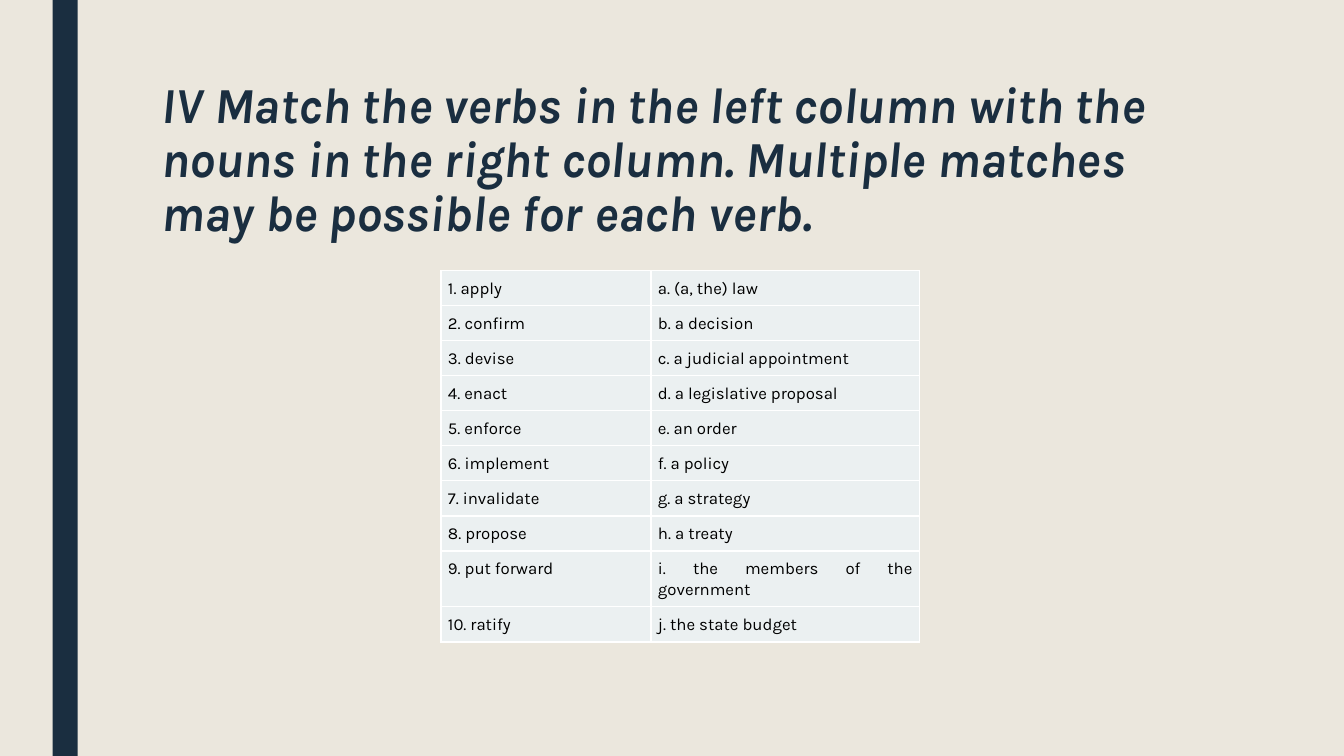
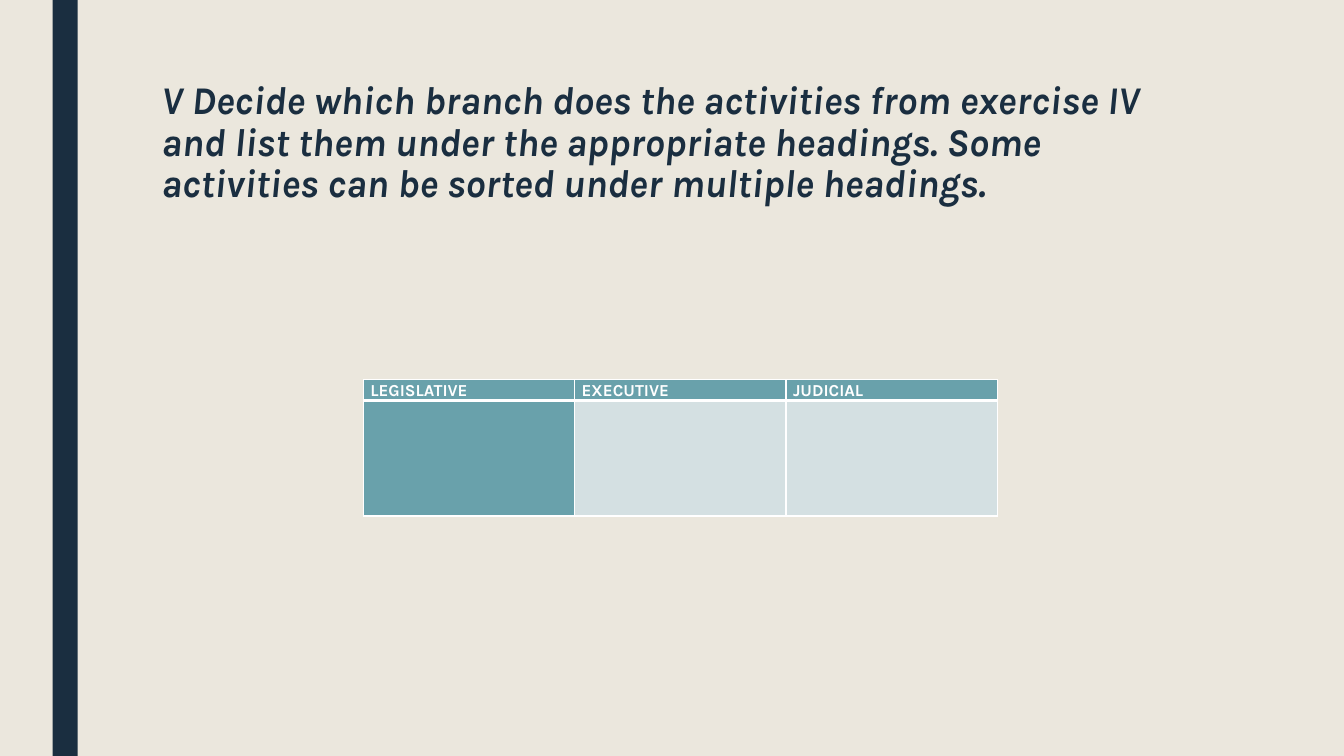
import dataclasses

import pptx
import pptx.dml.color
import pptx.enum.shapes
import pptx.enum.text
import pptx.oxml
import pptx.oxml.ns
import pptx.util

Pt = pptx.util.Pt
Align = pptx.enum.text.PP_ALIGN


@dataclasses.dataclass(frozen=True)
class Theme:
    font: str = "Karla"
    paper: str = "EBE7DD"
    navy: str = "1A2E40"
    teal: str = "69A1AB"
    pale: str = "EBF0F1"
    mist: str = "D4E0E2"
    white: str = "FFFFFF"
    black: str = "000000"
    title_size: int = 36
    long_title_size: int = 28
    cell_size: int = 12
    thin_rule: int = 1
    thick_rule: int = 3


class SlideBuilder:
    """Draw exercise slides in one shared style."""

    def __init__(self, theme):
        self.theme = theme
        self.deck = pptx.Presentation()
        self.deck.slide_width, self.deck.slide_height = Pt(960), Pt(540)
        self.paint(self.deck.slide_master.background.fill, theme.paper)
        self.page = None

    def paint(self, fill, color):
        fill.solid()
        fill.fore_color.rgb = pptx.dml.color.RGBColor.from_string(color)

    def start_page(self, title, size):
        self.page = self.deck.slides.add_slide(self.deck.slide_layouts.get_by_name("Title Only"))
        self.band()
        self.title(title, size)

    def band(self):
        band = self.page.shapes.add_shape(
            pptx.enum.shapes.MSO_SHAPE.RECTANGLE, Pt(37.5), Pt(0), Pt(18), Pt(540))
        band.shadow.inherit = False
        band.line.fill.background()
        self.paint(band.fill, self.theme.navy)

    def title(self, text, size):
        box = self.page.shapes.title
        box.left, box.top, box.width, box.height = Pt(108), Pt(54), Pt(756), Pt(117)
        frame = box.text_frame
        frame.word_wrap = True
        frame.auto_size = pptx.enum.text.MSO_AUTO_SIZE.NONE
        frame.vertical_anchor = pptx.enum.text.MSO_ANCHOR.TOP
        span = self.add_text(frame, text, size, self.theme.navy, Align.LEFT, 0.89)
        span.font.bold = span.font.italic = True

    def add_text(self, frame, text, size, color, align, spacing):
        para = frame.paragraphs[0]
        para.alignment, para.line_spacing = align, spacing
        span = para.add_run()
        span.text = text
        span.font.name, span.font.size = self.theme.font, Pt(size)
        span.font.color.rgb = pptx.dml.color.RGBColor.from_string(color)
        return span

    def table(self, left, top, widths, heights):
        frame = self.page.shapes.add_table(
            len(heights), len(widths), Pt(left), Pt(top), Pt(sum(widths)), Pt(sum(heights)))
        table = frame.table
        table.first_row = table.horz_banding = False
        for column, width in zip(table.columns, widths):
            column.width = Pt(width)
        for row, height in zip(table.rows, heights):
            row.height = Pt(height)
        return table

    def cell(self, cell, text, fill, color, inset, bold=False, **rules):
        cell.margin_left = cell.margin_right = Pt(5)
        cell.margin_top = cell.margin_bottom = Pt(inset)
        self.paint(cell.fill, fill)
        self.borders(cell, **rules)
        if text:
            span = self.add_text(
                cell.text_frame, text, self.theme.cell_size, color, Align.JUSTIFY, 1.07)
            span.font.bold = bold

    def borders(self, cell, **rules):
        properties = cell._tc.get_or_add_tcPr()
        for index, side in enumerate("LRTB"):
            width = Pt(rules.get(side, self.theme.thin_rule))
            properties.insert(index, pptx.oxml.parse_xml(
                f'<a:ln{side} {pptx.oxml.ns.nsdecls("a")} w="{width}"><a:solidFill>'
                f'<a:srgbClr val="{self.theme.white}"/></a:solidFill></a:ln{side}>'))

    def matching_table(self, pairs):
        heights = [40 if "members" in noun else 25 for _, noun in pairs]
        table = self.table(315, 193.5, [150, 192], heights)
        for row, pair in enumerate(pairs):
            for column, text in enumerate(pair):
                self.cell(table.cell(row, column), text, self.theme.pale, self.theme.black, 5)

    def sorting_table(self, headings):
        theme = self.theme
        table = self.table(259.5, 271, [151] * len(headings), [15, 82.5])
        for column, heading in enumerate(headings):
            self.cell(table.cell(0, column), heading, theme.teal, theme.white, 0,
                      bold=True, B=theme.thick_rule)
            self.cell(table.cell(1, column), "", theme.mist if column else theme.teal,
                      theme.black, 0, T=theme.thick_rule)


def main():
    theme = Theme()
    builder = SlideBuilder(theme)

    builder.start_page(
        "IV Match the verbs in the left column with the nouns in the right column. "
        "Multiple matches may be possible for each verb.", theme.title_size)
    builder.matching_table([
        ("1. apply", "a. (a, the) law"),
        ("2. confirm", "b. a decision"),
        ("3. devise", "c. a judicial appointment"),
        ("4. enact", "d. a legislative proposal"),
        ("5. enforce", "e. an order"),
        ("6. implement", "f. a policy"),
        ("7. invalidate", "g. a strategy"),
        ("8. propose", "h. a treaty"),
        ("9. put forward", "i. the members of the government"),
        ("10. ratify", "j. the state budget"),
    ])

    builder.start_page(
        "V Decide which branch does the activities from exercise IV and list them under "
        "the appropriate headings. Some activities can be sorted under multiple headings.",
        theme.long_title_size)
    builder.sorting_table(["LEGISLATIVE", "EXECUTIVE", "JUDICIAL"])

    builder.deck.save("out.pptx")


if __name__ == "__main__":
    main()
